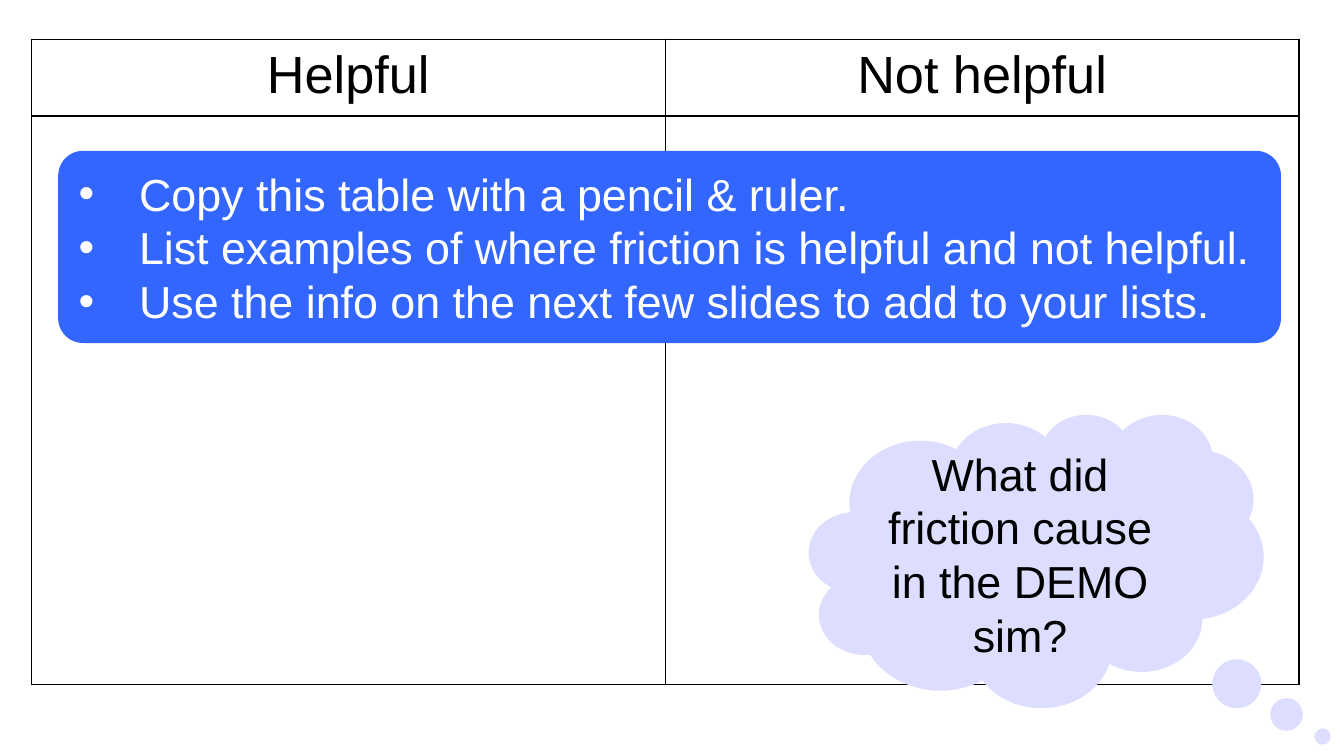
from pptx import Presentation
from pptx import util as u
from pptx.dml.color import RGBColor
from pptx.enum import shapes, text
from pptx.oxml import parse_xml
from pptx.oxml.ns import nsdecls


def paint(fill, colour):
    fill.solid()
    fill.fore_color.rgb = RGBColor.from_string(colour)


def add_run(p, words, size, colour):
    r = p.add_run()
    r.text = words
    r.font.name = "Arial"
    r.font.size = u.Pt(size)
    paint(r.font.fill, colour)


prs = Presentation()
prs.slide_width, prs.slide_height = u.Cm(25.4), u.Cm(14.28)
s = prs.slides.add_slide(prs.slide_layouts[6])

table = s.shapes.add_table(2, 2, u.Cm(0.59), u.Cm(0.74), u.Cm(23.96), u.Cm(12.19)).table
table.first_row = table.horz_banding = False
for row, height in zip(table.rows, (1.45, 10.74)):
    row.height = u.Cm(height)
for cell in table.iter_cells():
    paint(cell.fill, "FFFFFF")
    tcPr = cell._tc.get_or_add_tcPr()
    for i, side in enumerate(("lnL", "lnR", "lnT", "lnB")):
        tcPr.insert(i, parse_xml(
            f'<a:{side} {nsdecls("a")} w="9525"><a:solidFill>'
            f'<a:srgbClr val="000000"/></a:solidFill></a:{side}>'))
for cell, heading in zip(table.rows[0].cells, ("Helpful", "Not helpful")):
    p = cell.text_frame.paragraphs[0]
    p.alignment = text.PP_ALIGN.CENTER
    add_run(p, heading, 28, "000000")

box = s.shapes.add_shape(shapes.MSO_SHAPE.ROUNDED_RECTANGLE,
                         u.Cm(1.1), u.Cm(2.85), u.Cm(23.11), u.Cm(3.63))
box.adjustments[0] = 0.13
cloud = s.shapes.add_shape(shapes.MSO_SHAPE.CLOUD_CALLOUT,
                           u.Cm(15.29), u.Cm(7.82), u.Cm(8.59), u.Cm(5.54))
cloud.adjustments[0], cloud.adjustments[1] = 0.63, 0.6
for sp, colour in ((box, "3366FF"), (cloud, "DDDDFF")):
    sp.shadow.inherit = False
    paint(sp.fill, colour)
    sp.line.fill.background()
    sp.text_frame.word_wrap = True
    sp.text_frame.vertical_anchor = text.MSO_ANCHOR.MIDDLE

tf = box.text_frame
tasks = ("Copy this table with a pencil & ruler.",
         "List examples of where friction is helpful and not helpful.",
         "Use the info on the next few slides to add to your lists.")
for i, task in enumerate(tasks):
    p = tf.add_paragraph() if i else tf.paragraphs[0]
    p.alignment = text.PP_ALIGN.LEFT
    pPr = p._p.get_or_add_pPr()
    pPr.set("marL", str(u.Cm(1.14)))
    pPr.set("indent", str(-u.Cm(1.14)))
    pPr.append(parse_xml(f'<a:buFont {nsdecls("a")} typeface="Arial"/>'))
    pPr.append(parse_xml(f'<a:buChar {nsdecls("a")} char="•"/>'))
    add_run(p, task, 24, "FFFFFF")

p = cloud.text_frame.paragraphs[0]
p.alignment = text.PP_ALIGN.CENTER
add_run(p, "What did friction cause in the DEMO sim?", 24, "000000")

prs.save("out.pptx")
